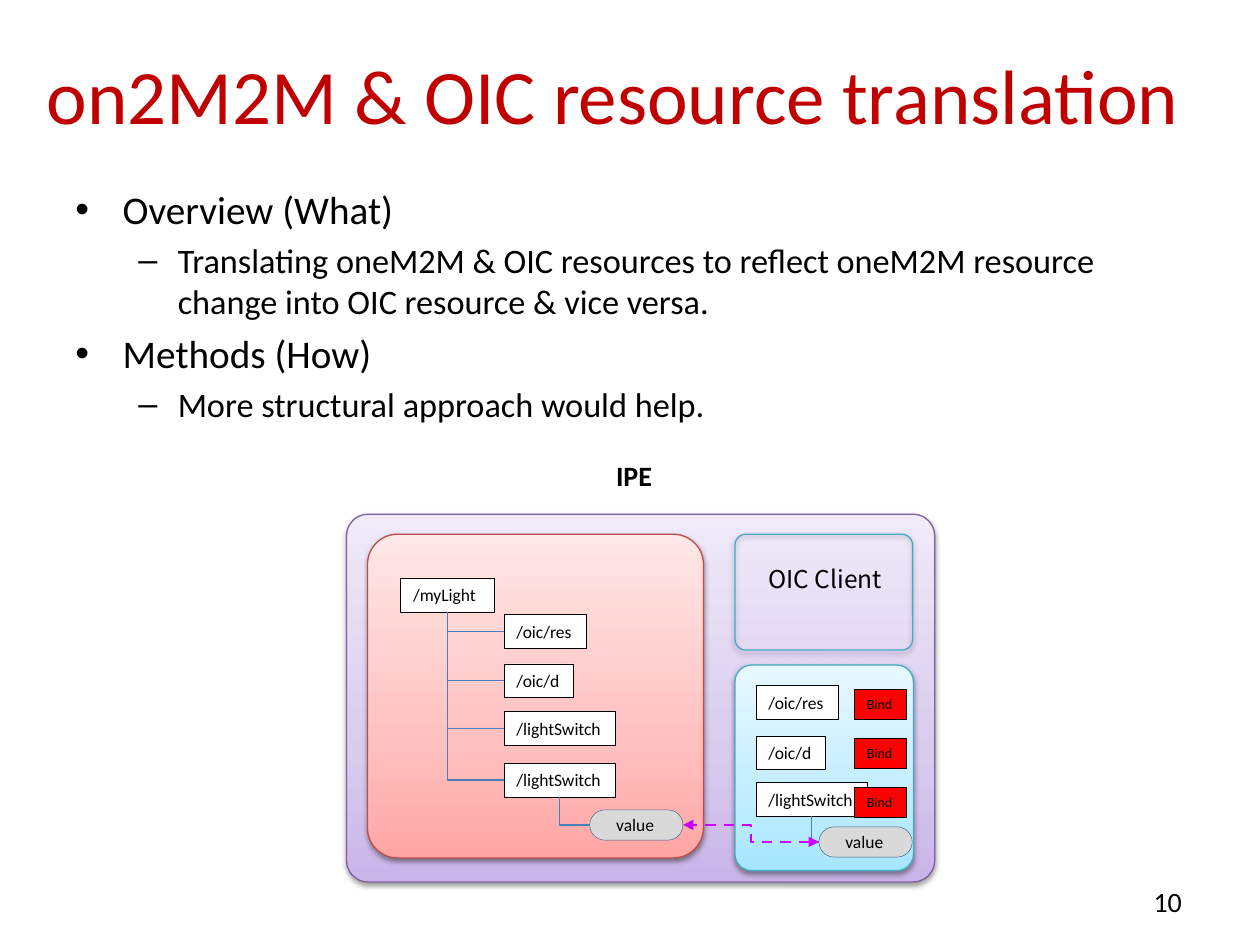
from collections import namedtuple
from dataclasses import dataclass
from copy import deepcopy

from lxml.etree import SubElement
from pptx import Presentation
from pptx.dml.color import RGBColor
from pptx.enum.dml import MSO_LINE as Dash
from pptx.enum.shapes import MSO_CONNECTOR as Link, MSO_SHAPE as Form
from pptx.enum.text import MSO_ANCHOR as Anchor, MSO_AUTO_SIZE as Fit, PP_ALIGN as Align
from pptx.oxml.ns import qn
from pptx.util import Pt

Box = namedtuple("Box", "left top width height")


@dataclass(frozen=True)
class Theme:
    font: str = "Calibri"
    client_font: str = "Noto Sans CJK KR"
    ink: str = "000000"
    title: str = "C00000"
    paper: str = "FFFFFF"
    bind: str = "FF0000"
    value: str = "D9D9D9"
    value_edge: str = "3A5F8C"
    tree: str = "4B7EBC"
    sync: str = "CC00FF"
    purple: tuple = ("C9B5E8", "D8CBEE", "F0EAF9")
    purple_edge: str = "7D60A0"
    blue: tuple = ("A7E6FF", "C1EDFF", "E7F8FF")
    blue_edge: str = "46AAC5"
    red: tuple = ("FFA6A5", "FFC0BF", "FFE7E7")
    red_edge: str = "BF4C48"
    title_size: float = 44
    head_size: float = 22.4
    point_size: float = 19.6
    label_size: float = 16
    client_size: float = 14
    node_size: float = 10
    bind_size: float = 8


THEME = Theme()
NODE_HEIGHT = 19.4
PILL_WIDTH, PILL_HEIGHT = 53.3, 17.3


def apply(target, values):
    for name, value in values.items():
        setattr(target, name, value)


def inside(box, left, top, width, height):
    return Box(box.left + left, box.top + top, width, height)


def points(box):
    return [Pt(value) for value in box]


def write(para, text, size, color=THEME.ink, font=THEME.font, bold=False, align=Align.LEFT):
    para.alignment = align
    span = para.add_run()
    span.text = text
    apply(span.font, {"size": Pt(size), "name": font, "bold": bold})
    span.font.color.rgb = RGBColor.from_string(color)


def indent(para, left, hanging, bullet=None):
    props = para._p.get_or_add_pPr()
    props.set("marL", str(Pt(left)))
    props.set("indent", str(Pt(-hanging)))
    if bullet:
        SubElement(props, qn("a:buFont")).set("typeface", "Arial")
        SubElement(props, qn("a:buChar")).set("char", bullet)


def add_text(page, box, text, size, frame=None, **style):
    holder = page.shapes.add_textbox(*points(box)).text_frame
    apply(holder, {"word_wrap": True, **(frame or {})})
    write(holder.paragraphs[0], text, size, **style)
    return holder.paragraphs[0]


def add_form(page, form, box, fill, edge, weight, corner=None):
    shape = page.shapes.add_shape(form, *points(box))
    shape.shadow.inherit = False
    if corner is not None:
        shape.adjustments[0] = corner
    if fill is None:
        shape.fill.background()
    elif isinstance(fill, tuple):
        shape.fill.gradient()
        shape.fill.gradient_angle = 90
        stops = shape._element.spPr.find(qn("a:gradFill")).find(qn("a:gsLst"))
        stops.insert(1, deepcopy(stops[0]))
        for stop, color, place in zip(shape.fill.gradient_stops, fill, (0, 0.35, 1)):
            stop.color.rgb = RGBColor.from_string(color)
            stop.position = place
    else:
        shape.fill.solid()
        shape.fill.fore_color.rgb = RGBColor.from_string(fill)
    shape.line.color.rgb = RGBColor.from_string(edge)
    shape.line.width = Pt(weight)
    return shape


def add_panel(page, box, fill, edge, corner):
    shape = add_form(page, Form.ROUNDED_RECTANGLE, box, fill, edge, 0.75, corner)
    effects = shape._element.spPr.find(qn("a:effectLst"))
    shadow = SubElement(effects, qn("a:outerShdw"), blurRad=str(Pt(3.1)),
                        dist=str(Pt(1.6)), dir="5400000", rotWithShape="0")
    black = SubElement(shadow, qn("a:srgbClr"), val=THEME.ink)
    SubElement(black, qn("a:alpha"), val="38000")


def add_node(page, box, text, fill=THEME.paper, size=THEME.node_size, wrap=False):
    shape = add_form(page, Form.RECTANGLE, box, fill, THEME.ink, 0.25)
    apply(shape.text_frame, {"word_wrap": wrap, "vertical_anchor": Anchor.TOP,
                             "auto_size": Fit.SHAPE_TO_FIT_TEXT})
    write(shape.text_frame.paragraphs[0], text, size)


def add_elbow(page, start, end, color, weight):
    link = page.shapes.add_connector(Link.ELBOW, *[Pt(value) for value in (*start, *end)])
    link.line.color.rgb = RGBColor.from_string(color)
    link.line.width = Pt(weight)
    SubElement(link._element.spPr, qn("a:effectLst"))
    return link


def add_branch(page, parent, child):
    link = add_elbow(page, child, parent, THEME.tree, 0.75)
    link._element.spPr.find(qn("a:prstGeom")).set("prst", "bentConnector2")


def add_value(page, box, parent):
    add_form(page, Form.ROUNDED_RECTANGLE, box, THEME.value, THEME.value_edge, 0.25, 0.5)
    add_text(page, inside(box, 8, -1, 36.7, NODE_HEIGHT), "value", THEME.node_size,
             {"word_wrap": False, "auto_size": Fit.SHAPE_TO_FIT_TEXT})
    middle = box.top + box.height / 2
    add_branch(page, parent, (box.left, middle))
    return middle


def add_client(page, box):
    add_panel(page, box, None, THEME.blue_edge, 0.093)
    add_text(page, inside(box, 3.6, 13.7, 95.8, 24.5), "OIC Client", THEME.client_size,
             font=THEME.client_font, align=Align.CENTER)


def add_server(page, box):
    add_panel(page, box, THEME.blue, THEME.blue_edge, 0.093)
    nodes = [("/oic/res", 11.7, 46.8), ("/oic/d", 40.5, 39.6), ("/lightSwitch", 67.1, 63.4)]
    for name, top, width in nodes:
        add_node(page, inside(box, 12, top, width, NODE_HEIGHT), name)
    for row in range(len(nodes)):
        add_node(page, inside(box, 68.2, 13.8 + 28.1 * row, 29.5, 17.3), "Bind",
                 THEME.bind, THEME.bind_size, wrap=True)
    pill = inside(box, 48, 92.5, PILL_WIDTH, PILL_HEIGHT)
    parent = (box.left + 12 + width / 2, box.top + top + NODE_HEIGHT)
    return pill.left, add_value(page, pill, parent)


def add_tree(page, box):
    add_panel(page, box, THEME.red, THEME.red_edge, 0.093)
    root = inside(box, 19, 25, 53.3, NODE_HEIGHT)
    add_node(page, root, "/myLight")
    trunk = (root.left + root.width / 2, root.top + root.height)
    for name, top, width in [("/oic/res", 46, 46.8), ("/oic/d", 74, 39.6),
                             ("/lightSwitch", 101.3, 63.4), ("/lightSwitch", 130.8, 63.4)]:
        node = inside(box, 78, top, width, NODE_HEIGHT)
        add_node(page, node, name)
        add_branch(page, trunk, (node.left, node.top + node.height / 2))
    pill = inside(box, 127, 157.5, PILL_WIDTH, PILL_HEIGHT)
    parent = (node.left + node.width / 2, node.top + node.height)
    return pill.left + pill.width, add_value(page, pill, parent)


def add_proxy(page, box):
    add_panel(page, box, THEME.purple, THEME.purple_edge, 0.059)
    add_client(page, inside(box, 222, 11.5, 101.5, 66.2))
    server_value = add_server(page, inside(box, 222, 86.2, 102, 117.5))
    tree_value = add_tree(page, inside(box, 12, 11.5, 192, 185))
    label = add_text(page, inside(box, 120, -44, 88.6, 43.9), "IPE", THEME.label_size,
                     {"vertical_anchor": Anchor.MIDDLE}, bold=True, align=Align.CENTER)
    indent(label, 36, 36)
    sync = add_elbow(page, server_value, tree_value, THEME.sync, 1.5)
    sync.line.dash_style = Dash.DASH
    outline = sync._element.spPr.find(qn("a:ln"))
    for end in ("a:headEnd", "a:tailEnd"):
        SubElement(outline, qn(end), type="triangle")


def add_title(page, box):
    title = add_text(page, box, "on2M2M & OIC resource translation", THEME.title_size,
                     {"vertical_anchor": Anchor.MIDDLE, "margin_right": Pt(27)},
                     color=THEME.title, align=Align.CENTER)
    indent(title, 40, 40)


def add_outline(page, box):
    holder = page.shapes.add_textbox(*points(box)).text_frame
    holder.word_wrap = True
    levels = [(THEME.head_size, 27, 27, "•"), (THEME.point_size, 58.5, 22.5, "–")]
    lines = [(0, "Overview (What)"),
             (1, "Translating oneM2M & OIC resources to reflect oneM2M resource "
                 "change into OIC resource & vice versa."),
             (0, "Methods (How)"),
             (1, "More structural approach would help.")]
    for row, (level, text) in enumerate(lines):
        para = holder.add_paragraph() if row else holder.paragraphs[0]
        size, left, hanging, bullet = levels[level]
        apply(para, {"level": level, "space_before": Pt(round(size * 0.2, 1))})
        write(para, text, size)
        indent(para, left, hanging, bullet)


def main():
    deck = Presentation()
    apply(deck, {"slide_width": Pt(720), "slide_height": Pt(540)})
    page = deck.slides.add_slide(deck.slide_layouts[6])
    add_text(page, Box(649.4, 501.8, 33.1, 26.6), "10", THEME.label_size,
             {"word_wrap": False, "auto_size": Fit.SHAPE_TO_FIT_TEXT}, align=Align.RIGHT)
    add_title(page, Box(-11.5, 23.8, 743.8, 59.8))
    add_outline(page, Box(36, 102.2, 654.5, 131.8))
    add_proxy(page, Box(198, 293.8, 336.2, 210.2))
    deck.save("out.pptx")


if __name__ == "__main__":
    main()
